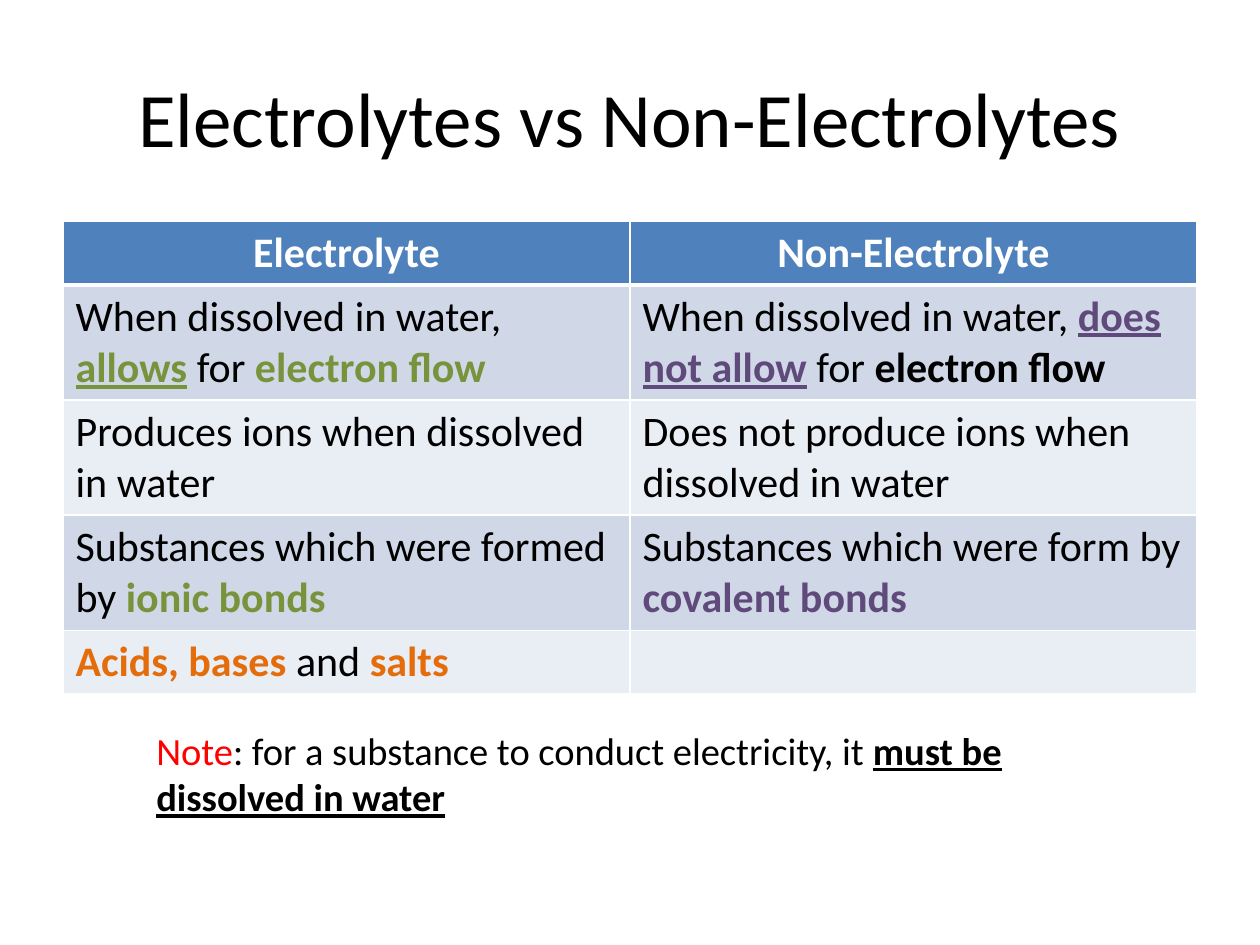
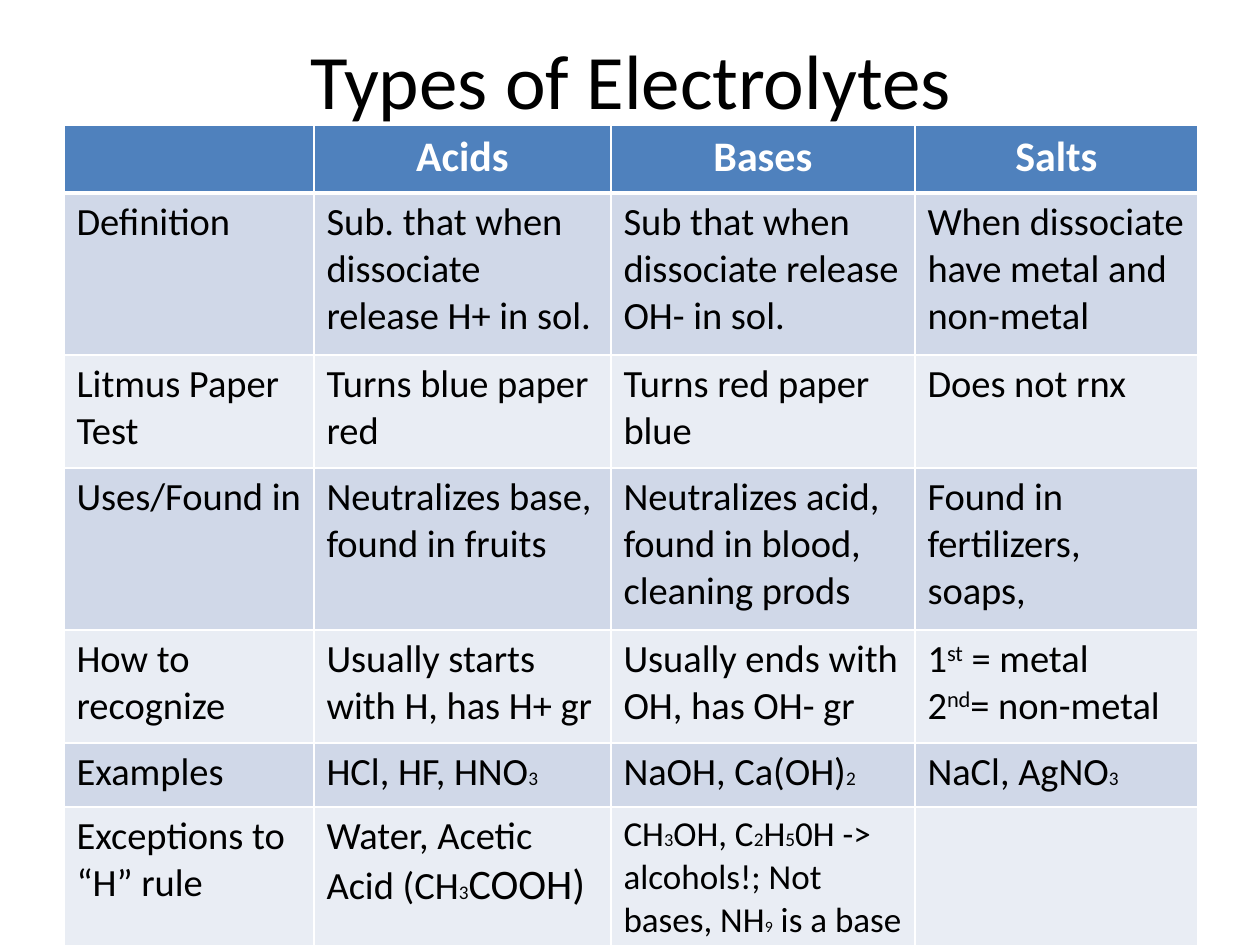
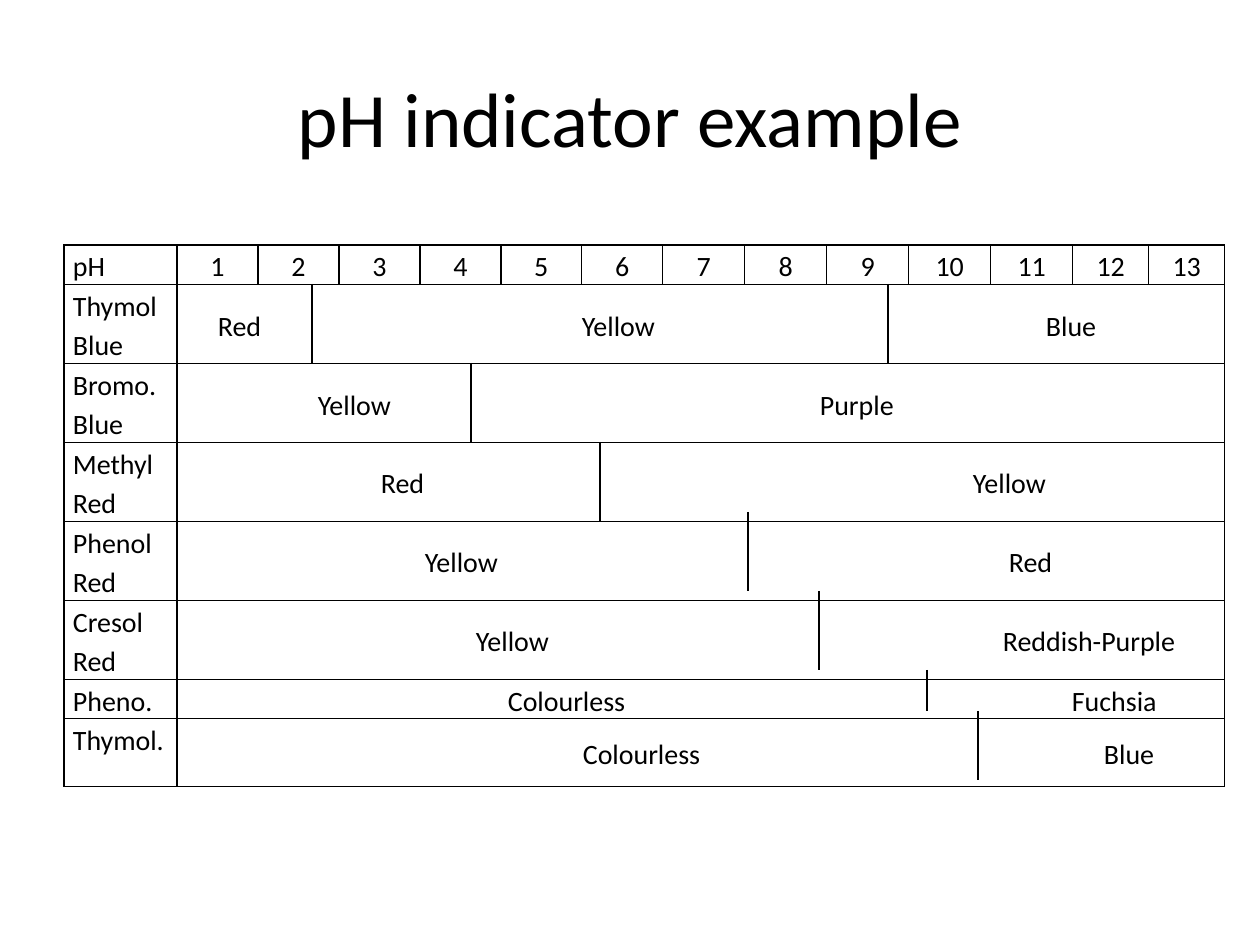
from dataclasses import dataclass

from lxml.etree import SubElement
from pptx import Presentation
from pptx.dml.color import RGBColor as Rgb
from pptx.enum.shapes import MSO_CONNECTOR as Connector
from pptx.enum.text import MSO_ANCHOR as Anchor, PP_ALIGN as Align
from pptx.oxml.ns import qn
from pptx.util import Emu, Pt

TITLE_ONLY = 5


@dataclass(frozen=True)
class Theme:
    font: str = "Calibri"
    black: str = "000000"
    white: str = "FFFFFF"
    header: str = "4F81BD"
    bands: tuple = ("D0D8E8", "E9EDF4")
    green: str = "77933C"
    purple: str = "604A7B"
    orange: str = "E46C0A"
    red: str = "FF0000"
    title: float = 44
    large: float = 24
    body: float = 22
    compact: float = 20
    label: float = 16
    digit: float = 11
    small_digit: float = 10.5
    tiny_digit: float = 9
    thin: float = 1
    thick: float = 3
    divider: float = 0.75


THEME = Theme()
BOLD = dict(bold=True)
KEY = dict(bold=True, underline=True)
GREEN = dict(color=THEME.green, bold=True)
PURPLE = dict(color=THEME.purple, bold=True)
ORANGE = dict(color=THEME.orange, bold=True)
RAISED = dict(raised=True)
DIGIT = dict(size=THEME.digit)
LARGE = dict(size=THEME.large)
COMPACT = dict(size=THEME.compact)


def px(length):
    return Emu(round(length * 914400 / 126))


class Slides:
    def __init__(self, theme):
        self.theme = theme
        self.deck = Presentation()
        self.deck.slide_width, self.deck.slide_height = px(1260), px(945)
        self.page = None

    def start(self, title, left=63, top=38):
        self.page = self.deck.slides.add_slide(self.deck.slide_layouts[TITLE_ONLY])
        box = self.page.shapes.title
        box.left, box.top, box.width, box.height = map(px, (left, top, 1134, 158))
        box.text_frame.vertical_anchor = Anchor.MIDDLE
        self.add_text(box.text_frame, title, self.theme.title, align=Align.CENTER)

    def span(self, para, text, size, color=None, bold=False, underline=False, raised=False):
        span = para.add_run()
        span.text = text
        font = span.font
        font.name, font.size = self.theme.font, Pt(size)
        font.bold, font.underline = bold, underline
        font.color.rgb = Rgb.from_string(color or self.theme.black)
        if raised:
            font._element.set("baseline", "30000")

    def add_text(self, frame, content, size, align=Align.LEFT, spacing=None, **look):
        spans = [content] if isinstance(content, str) else content
        paras = spans if spans and isinstance(spans[0], list) else [spans]
        for index, parts in enumerate(paras):
            para = frame.add_paragraph() if index else frame.paragraphs[0]
            para.alignment = align
            if spacing:
                para.line_spacing = spacing
            for part in parts:
                text, own = (part, {}) if isinstance(part, str) else part
                self.span(para, text, **{"size": size, **look, **own})

    def note(self, left, top, width, height, content):
        box = self.page.shapes.add_textbox(*map(px, (left, top, width, height)))
        box.text_frame.word_wrap = True
        self.add_text(box.text_frame, content, self.theme.body)

    def divider(self, x, top, bottom):
        line = self.page.shapes.add_connector(
            Connector.STRAIGHT, px(x), px(top), px(x), px(bottom))
        line.line.color.rgb = Rgb.from_string(self.theme.black)
        line.line.width = Pt(self.theme.divider)
        SubElement(line._element.spPr, qn("a:effectLst"))

    def grid(self, left, top, widths, heights):
        frame = self.page.shapes.add_table(
            len(heights), len(widths), px(left), px(top), px(sum(widths)), px(sum(heights)))
        table = frame.table
        for column, width in zip(table.columns, widths):
            column.width = px(width)
        for row, height in zip(table.rows, heights):
            row.height = px(height)
        return table

    def paint(self, cell, fill, border, top, bottom):
        props = cell._tc.get_or_add_tcPr()
        thin = self.theme.thin
        for side, weight in zip("LRTB", (thin, thin, top, bottom)):
            line = SubElement(props, qn(f"a:ln{side}"), w=str(Pt(weight)))
            SubElement(SubElement(line, qn("a:solidFill")), qn("a:srgbClr"), val=border)
        cell.fill.solid()
        cell.fill.fore_color.rgb = Rgb.from_string(fill)

    def banded_table(self, left, top, widths, heights, rows, size):
        theme = self.theme
        table = self.grid(left, top, widths, heights)
        for r, row in enumerate(rows):
            fill = theme.bands[(r - 1) % 2] if r else theme.header
            above = theme.thick if r == 1 else theme.thin
            below = theme.thin if r else theme.thick
            for c, content in enumerate(row):
                cell = table.cell(r, c)
                self.paint(cell, fill, theme.white, above, below)
                if not content:
                    continue
                if r:
                    self.add_text(cell.text_frame, content, size)
                else:
                    self.add_text(cell.text_frame, content, theme.large,
                                  align=Align.CENTER, color=theme.white, bold=True)

    def range_table(self, left, top, widths, heights, scale, indicators):
        theme, inset = self.theme, 9
        table = self.grid(left, top, widths, heights)
        table.first_row = table.horz_banding = False
        for cell in table.iter_cells():
            self.paint(cell, theme.white, theme.black, theme.thin, theme.thin)
            cell.margin_left = cell.margin_right = px(inset)
            cell.margin_top = cell.margin_bottom = 0
        for c, text in enumerate(scale):
            self.add_text(table.cell(0, c).text_frame, text, theme.label, spacing=1.15,
                          align=Align.CENTER if c else Align.LEFT)
        text_left = left + widths[0] + inset
        for r, (name, ranges) in enumerate(indicators, 1):
            self.add_text(table.cell(r, 0).text_frame, name, theme.label, spacing=1.15)
            cell = table.cell(r, 1)
            cell.merge(table.cell(r, len(widths) - 1))
            cell.vertical_anchor = Anchor.MIDDLE
            colours = ["\t" + colour for colour, x in ranges]
            self.add_text(cell.text_frame, colours, theme.label, spacing=1.15)
            props = cell.text_frame.paragraphs[0]._p.get_or_add_pPr()
            stops = SubElement(props, qn("a:tabLst"))
            for colour, x in ranges:
                SubElement(stops, qn("a:tab"), pos=str(px(x - text_left)), algn="l")


def comparison(slides):
    slides.start("Electrolytes vs Non-Electrolytes")
    rows = [
        ["Electrolyte", "Non-Electrolyte"],
        [["When dissolved in water, ", ("allows", {**GREEN, **KEY}), " for ",
          ("electron flow", GREEN)],
         ["When dissolved in water, ", ("does not allow", {**PURPLE, **KEY}),
          (" ", BOLD), "for ", ("electron flow", BOLD)]],
        ["Produces ions when dissolved in water",
         "Does not produce ions when dissolved in water"],
        [["Substances which were formed by ", ("ionic bonds", GREEN)],
         ["Substances which were form by ", ("covalent bonds", PURPLE)]],
        [[("Acids, bases ", ORANGE), "and ", ("salts", ORANGE)], ""],
    ]
    slides.banded_table(63, 221, [567] * 2, [63, 115, 115, 115, 63], rows, THEME.large)
    slides.note(144, 721, 973, 106, [
        ("Note", dict(color=THEME.red)),
        ": for a substance to conduct electricity, it ",
        ("must be dissolved in water", KEY)])


def electrolyte_types(slides):
    slides.start("Types of Electrolytes", left=64, top=0)
    rows = [
        ["", "Acids", "Bases", "Salts"],
        ["Definition", "Sub. that when dissociate release H+ in sol.",
         "Sub that when dissociate release OH- in sol.",
         "When dissociate have metal and non-metal"],
        ["Litmus Paper Test", "Turns blue paper red", "Turns red paper blue",
         "Does not rnx"],
        ["Uses/Found in", "Neutralizes base, found in fruits",
         "Neutralizes acid, found in blood, cleaning prods",
         "Found in fertilizers, soaps,"],
        ["How to recognize", "Usually starts with H, has H+ gr",
         "Usually ends with OH, has OH- gr",
         [["1", ("st", RAISED), " = metal"], ["2", ("nd", RAISED), "= non-metal"]]],
        ["Examples", ["HCl, HF, HNO", ("3", DIGIT)], ["NaOH, Ca(OH)", ("2", DIGIT)],
         ["NaCl, AgNO", ("3", DIGIT)]],
        ["Exceptions to “H” rule",
         ["Water, Acetic Acid (CH", ("3", DIGIT), ("COOH)", LARGE)],
         [("CH", COMPACT), ("3", dict(size=THEME.small_digit)), ("OH, C", COMPACT),
          ("2", DIGIT), ("H", COMPACT), ("5", DIGIT),
          ("0H -> alcohols!; Not bases, NH", COMPACT),
          ("9", dict(size=THEME.tiny_digit)), (" is a base", COMPACT)],
         ""],
    ]
    slides.banded_table(64, 125, [250, 297, 304, 283],
                        [68, 162, 113, 162, 113, 64, 138], rows, THEME.body)


def indicator_ranges(slides):
    slides.start("pH indicator example")
    scale = ["pH"] + [str(value) for value in range(1, 14)]
    indicators = [
        ("Thymol Blue", [("Red", 218), ("Yellow", 582), ("Blue", 1046)]),
        ("Bromo. Blue", [("Yellow", 318), ("Purple", 820)]),
        ("Methyl Red", [("Red", 381), ("Yellow", 973)]),
        ("Phenol Red", [("Yellow", 425), ("Red", 1009)]),
        ("Cresol Red", [("Yellow", 476), ("Reddish-Purple", 1003)]),
        ("Pheno.", [("Colourless", 508), ("Fuchsia", 1072)]),
        ("Thymol.", [("Colourless", 583), ("Blue", 1104)]),
    ]
    slides.range_table(64, 245, [113] + [81] * 6 + [82] * 5 + [76] * 2,
                       [39] + [79] * 5 + [39, 68], scale, indicators)
    for x, top, bottom in [
        (312, 284, 363), (888, 284, 363), (471, 363, 442), (600, 442, 522),
        (748, 512, 591), (819, 591, 670), (927, 670, 711), (978, 711, 780),
    ]:
        slides.divider(x, top, bottom)


def main():
    slides = Slides(THEME)
    comparison(slides)
    electrolyte_types(slides)
    indicator_ranges(slides)
    slides.deck.save("out.pptx")


if __name__ == "__main__":
    main()
